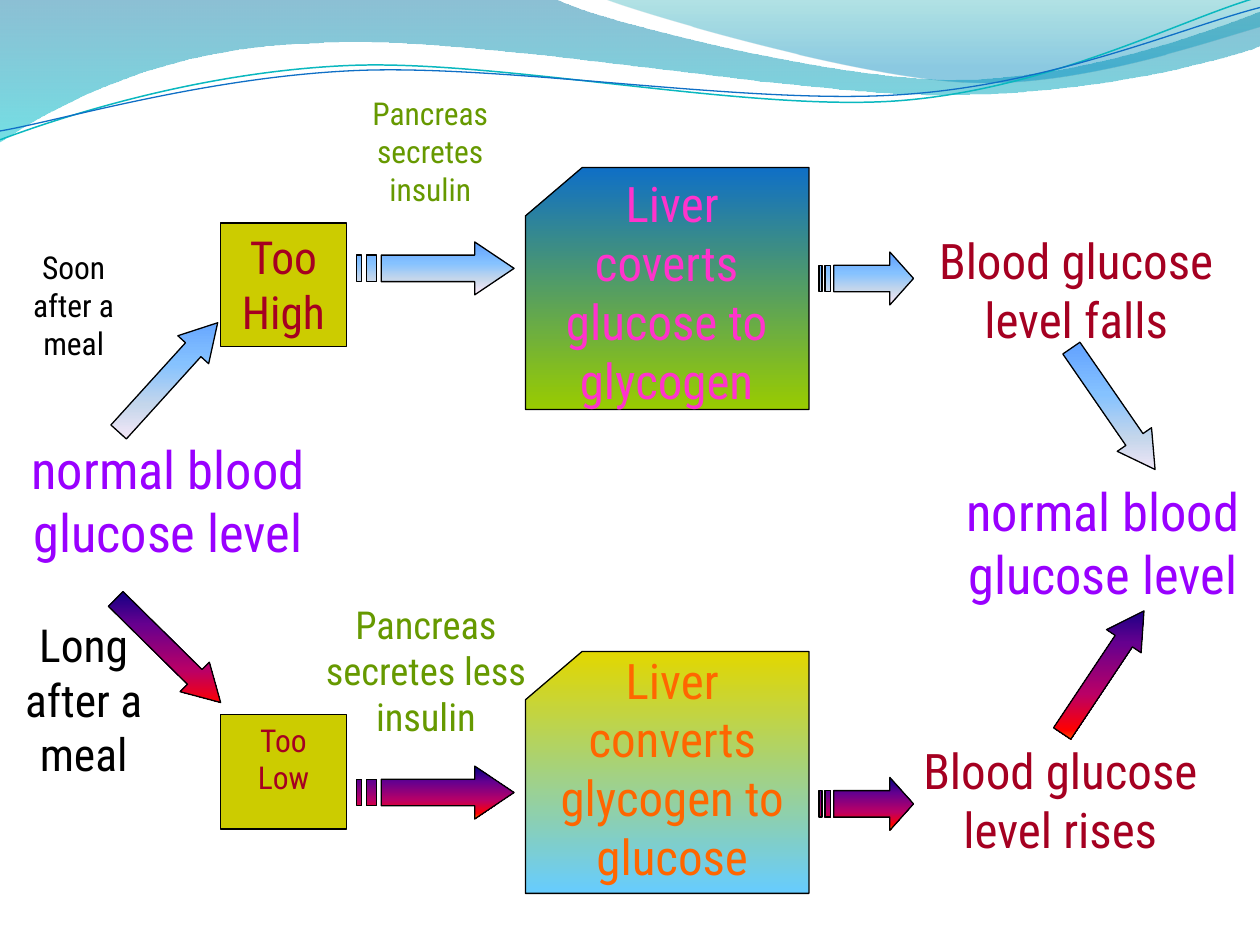
from math import cos, radians, sin

from lxml import etree
from pptx import Presentation
from pptx.dml.color import RGBColor
from pptx.enum.shapes import MSO_SHAPE
from pptx.enum.text import MSO_ANCHOR, PP_ALIGN
from pptx.oxml.ns import qn
from pptx.util import Inches, Pt

RECT = MSO_SHAPE.RECTANGLE
CARD = MSO_SHAPE.FLOWCHART_CARD
ARROW = MSO_SHAPE.RIGHT_ARROW
CENTER = PP_ALIGN.CENTER
TOP = MSO_ANCHOR.TOP
FONT = "Roboto Condensed"

# Gradient stops: position, colour, opacity (percent)
COOL = [(0, "5E9EFF", 100), (40, "85C2FF", 100), (70, "C4D6EB", 100), (100, "FFEBFA", 100)]
WARM = [(0, "000082", 100), (30, "66008F", 100), (65, "BA0066", 100),
        (90, "FF0000", 100), (100, "FF8200", 100)]

# Wave outlines: one point is a straight step, three points are a Bezier curve
BANDS = [
    ([[(0, 0)], [(4.4, -0.01)], [(4.76, 0.17), (6.64, 0.63), (7.58, 0.63)],
      [(8.53, 0.63), (9.58, 0.26), (10, 0.09)], [(10.01, 0.36)],
      [(9.83, 0.44), (8.7, 0.76), (7.46, 0.75)], [(6.22, 0.75), (3.82, 0.28), (2.57, 0.34)],
      [(1.29, 0.36), (0.46, 0.83), (-0.01, 1.13)]],
     [(0, "0074A1", 45), (100, "00C6CF", 55)]),
    ([[(4.79, -0.01)], [(5.09, 0.11), (6.82, 0.62), (7.69, 0.65)],
      [(8.56, 0.69), (9.61, 0.32), (10, 0.21)], [(10, 0)]],
     [(0, "00A1A9", 30), (80, "008BBF", 45)]),
]
TILT = -2.7
CURVES = [
    ([[(0, 1.11)], [(0.48, 0.93), (1.58, 0.57), (2.77, 0.52)],
      [(3.95, 0.47), (5.93, 0.89), (7.13, 0.8)], [(8.33, 0.71), (9.38, 0.15), (9.98, -0.02)]],
     (4.99, 0.57), "0AB8BF", 0.85),
    ([[(0, 1.04)], [(0.47, 0.96), (1.64, 0.61), (2.83, 0.56)],
      [(4.03, 0.51), (5.97, 0.84), (7.17, 0.75)], [(8.36, 0.67), (9.41, 0.21), (10, 0.06)]],
     (5, 0.59), "0F6FC6", 0.75),
]

CARDS = [(1.33, [(0, "0F6FC6", 100), (100, "99CC00", 100)]),
         (5.17, [(0, "E2D700", 100), (100, "66CCFF", 100)])]
LEVELS = [("Too High", 1.77, 0.98, 26), ("Too Low", 5.67, 0.91, 18)]
STRIPED = [(2.83, 1.92, 1.25, COOL), (6.5, 2, 0.75, COOL),
           (2.83, 6.08, 1.25, WARM), (6.5, 6.17, 0.75, WARM)]
SLANTED = [(0.75, 2.83, 312.2, COOL), (8.25, 3.08, 55.4, COOL),
           (0.75, 5, 44.6, WARM), (8.17, 5.17, 303.7, WARM)]
LABELS = [
    ("Soon after a meal", (0, 1.92, 1.17, 1.3), 18, "000000"),
    ("Long after a meal", (0.08, 4.85, 1.17, 1.4), 26, "000000"),
    ("normal blood glucose level", (0, 3.42, 2.67, 1.1), 30, "9900FF"),
    ("Pancreas secretes insulin", (2.58, 0.7, 1.67, 1.3), 18, "669900"),
    ("Pancreas secretes less insulin", (2.42, 4.72, 1.92, 1.2), 22, "669900"),
    (" Liver coverts glucose to glycogen", (4.25, 1.33, 2.08, 1.97), 28, "FF33CC"),
    ("Liver converts glycogen to glucose", (4.25, 5.11, 2.17, 1.97), 28, "FF6600"),
    ("Blood glucose level falls", (7.08, 1.78, 2.92, 1.03), 28, "A50021"),
    ("Blood glucose level rises", (7.08, 5.83, 2.67, 1.03), 28, "A50021"),
    ("normal blood glucose level", (7.42, 3.75, 2.67, 1.1), 30, "9900FF"),
]


def rgb(code):
    return RGBColor.from_string(code)


def shade(shape, stops):
    """Fill from top to bottom, whatever the rotation of the shape."""
    shape.fill.gradient()
    shape.fill.gradient_angle = 270
    grad = shape._element.spPr.find(qn("a:gradFill"))
    grad.set("rotWithShape", "0")
    rows = grad.find(qn("a:gsLst"))
    for old in list(rows):
        rows.remove(old)
    for pos, code, alpha in stops:
        stop = etree.SubElement(rows, qn("a:gs"), pos=str(pos * 1000))
        color = etree.SubElement(stop, qn("a:srgbClr"), val=code)
        if alpha < 100:
            etree.SubElement(color, qn("a:alpha"), val=str(alpha * 1000))


def edge(shape, code="000000", width=0.75):
    shape.shadow.inherit = False
    shape.line.color.rgb = rgb(code)
    shape.line.width = Pt(width)


def write(shape, text, size, code):
    frame = shape.text_frame
    frame.word_wrap = True
    frame.vertical_anchor = TOP
    para = frame.paragraphs[0]
    para.alignment = CENTER
    run = para.add_run()
    run.text = text
    run.font.size = Pt(size)
    run.font.name = FONT
    run.font.color.rgb = rgb(code)


def outline(shapes, paths, close=True):
    paths = [[(Inches(x), Inches(y)) for x, y in path] for path in paths]
    build = shapes.build_freeform(*paths[0][0])
    for i, path in enumerate(paths):
        if i:
            build.move_to(*path[0])
        build.add_line_segments(path[1:], close=close)
    return build.convert_to_shape()


def wave(shapes, steps, close=True):
    """Draw an outline through the step ends, then bend the curved steps."""
    shape = outline(shapes, [[step[-1] for step in steps]], close)
    lines = list(shape._element.iter(qn("a:lnTo")))
    for line, step in zip(lines, steps[1:]):
        if len(step) == 3:
            bend = etree.Element(qn("a:cubicBezTo"))
            for x, y in step:
                etree.SubElement(bend, qn("a:pt"), x=str(Inches(x) - shape.left),
                                 y=str(Inches(y) - shape.top))
            line.getparent().replace(line, bend)
    return shape


def turn(point, mid, angle):
    x, y = point[0] - mid[0], point[1] - mid[1]
    c, s = cos(radians(angle)), sin(radians(angle))
    return mid[0] + x * c - y * s, mid[1] + x * s + y * c


def striped(shapes, left, top, width, stops):
    """Draw an arrow with two stripes behind its tail."""
    tall = 0.42
    high, low, mid = top + tall / 4, top + tall * 3 / 4, top + tall / 2
    tail, neck, tip = left + width * 5 / 32, left + width * 3 / 4, left + width
    paths = [[(neck, top), (neck, high), (tail, high), (tail, low),
              (neck, low), (neck, top + tall), (tip, mid)]]
    for start, end in ((2 / 32, 4 / 32), (0, 1 / 32)):
        a, b = left + width * start, left + width * end
        paths.append([(a, high), (a, low), (b, low), (b, high)])
    shape = outline(shapes, paths)
    shade(shape, stops)
    edge(shape)


def add(shapes, kind, *box):
    shape = shapes.add_shape(kind, *map(Inches, box))
    edge(shape)
    return shape


def main():
    deck = Presentation()
    deck.slide_width, deck.slide_height = Inches(10), Inches(7.5)
    shapes = deck.slides.add_slide(deck.slide_layouts[6]).shapes

    for steps, stops in BANDS:
        band = wave(shapes, steps)
        shade(band, stops)
        band.line.fill.background()
        band.shadow.inherit = False
    for steps, mid, code, width in CURVES:
        level = [[turn(point, mid, -TILT) for point in step] for step in steps]
        curve = wave(shapes, level, close=False)
        curve.rotation = TILT
        curve.fill.background()
        edge(curve, code, width)

    for top, stops in CARDS:
        shade(add(shapes, CARD, 4.17, top, 2.25, 1.92), stops)
    for text, top, height, size in LEVELS:
        box = add(shapes, RECT, 1.75, top, 1, height)
        box.fill.solid()
        box.fill.fore_color.rgb = rgb("CCCC00")
        write(box, text, size, "A50021")
    for arrow in STRIPED:
        striped(shapes, *arrow)
    for left, top, angle, stops in SLANTED:
        arrow = add(shapes, ARROW, left, top, 1.17, 0.33)
        arrow.adjustments[1] = 0.875
        arrow.rotation = angle
        shade(arrow, stops)
    for text, box, size, code in LABELS:
        write(shapes.add_textbox(*map(Inches, box)), text, size, code)

    deck.save("out.pptx")


if __name__ == "__main__":
    main()
